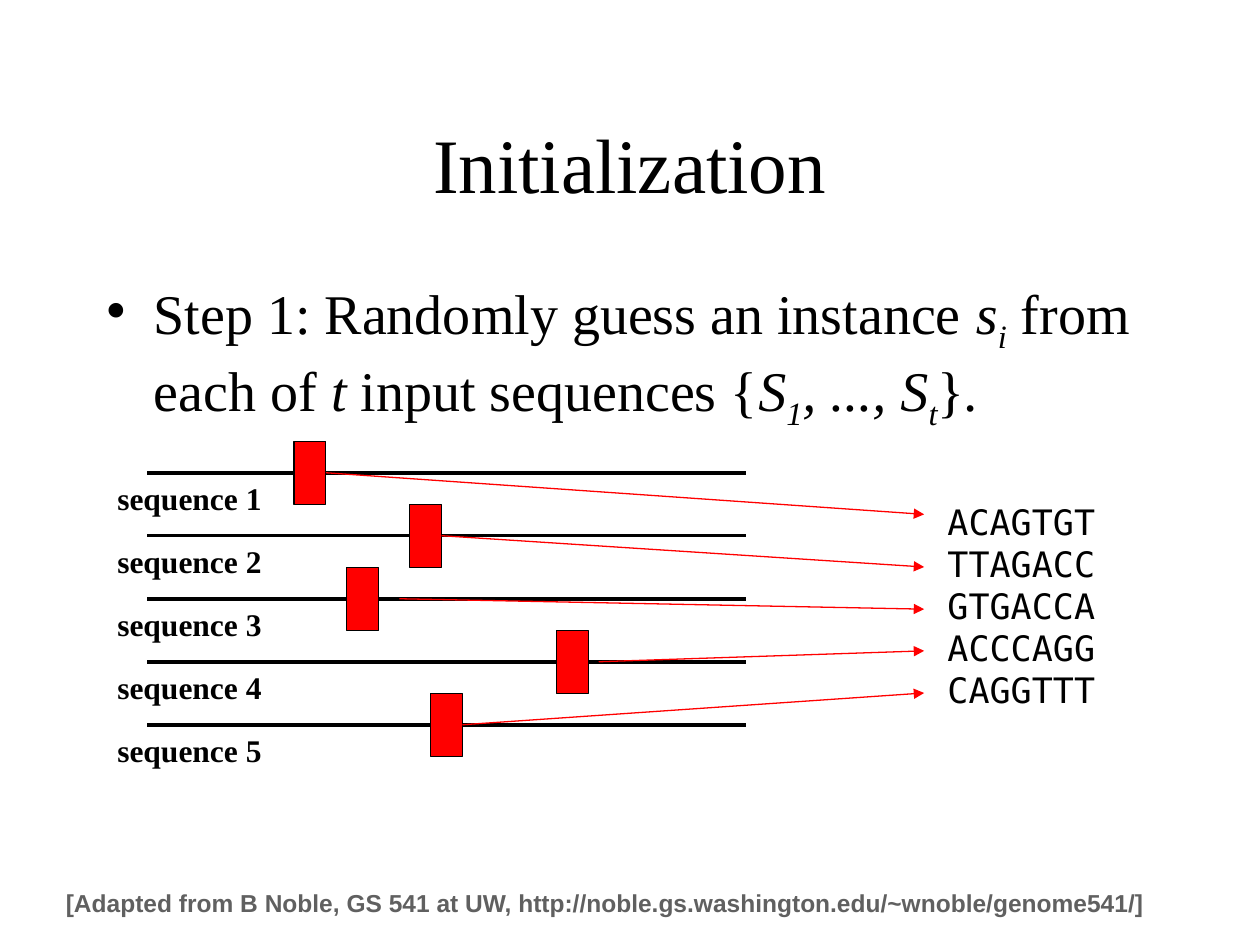
from dataclasses import dataclass

from lxml import etree
from pptx import Presentation
from pptx.dml.color import RGBColor
from pptx.enum.shapes import MSO_CONNECTOR, MSO_SHAPE
from pptx.enum.text import MSO_ANCHOR, MSO_AUTO_SIZE, PP_ALIGN
from pptx.oxml.ns import qn
from pptx.util import Cm, Pt

STRAIGHT = MSO_CONNECTOR.STRAIGHT
RECTANGLE = MSO_SHAPE.RECTANGLE
TOP, MIDDLE = MSO_ANCHOR.TOP, MSO_ANCHOR.MIDDLE
LEFT, CENTER = PP_ALIGN.LEFT, PP_ALIGN.CENTER
FIT_SHAPE = MSO_AUTO_SIZE.SHAPE_TO_FIT_TEXT
RIGHT_SIDE = 3


@dataclass(frozen=True)
class Theme:
    black: RGBColor = RGBColor(0x00, 0x00, 0x00)
    red: RGBColor = RGBColor(0xFF, 0x00, 0x00)
    gray: RGBColor = RGBColor(0x60, 0x60, 0x60)
    serif: str = "Times New Roman"
    sans: str = "Arial"
    mono: str = "DejaVu Sans Mono"
    title_size: int = 44
    body_size: int = 32
    label_size: int = 18
    motif_size: int = 20
    source_size: int = 14
    sequence_width: float = 2
    thin_width: float = 0.75


class SlideBuilder:
    """Draws elements on one slide in one theme; lengths are centimetres."""

    def __init__(self, slide, theme):
        self.shapes = slide.shapes
        self.theme = theme

    def format_run(self, span, size, font, color, bold=False):
        span.font.size = Pt(size)
        span.font.name = font
        span.font.color.rgb = color
        span.font.bold = bold

    def text(self, content, left, top, width, height, size, font=None, color=None,
             bold=False, align=CENTER, anchor=TOP, wrap=False):
        box = self.shapes.add_textbox(Cm(left), Cm(top), Cm(width), Cm(height))
        frame = box.text_frame
        frame.text = content
        frame.word_wrap = wrap
        frame.vertical_anchor = anchor
        if not wrap:
            frame.auto_size = FIT_SHAPE
        for para in frame.paragraphs:
            para.alignment = align
            for span in para.runs:
                self.format_run(span, size, font or self.theme.serif,
                                color or self.theme.black, bold)
        return box

    def bullet(self, spans, left, top, width, height, size):
        """Each span is (text, italic, subscript)."""
        box = self.shapes.add_textbox(Cm(left), Cm(top), Cm(width), Cm(height))
        box.text_frame.word_wrap = True
        para = box.text_frame.paragraphs[0]
        para.space_before = Pt(0.2 * size)
        for content, italic, subscript in spans:
            span = para.add_run()
            span.text = content
            self.format_run(span, size, self.theme.serif, self.theme.black)
            span.font.italic = italic
            if subscript:
                span.font._element.set("baseline", "-25000")
        properties = para._p.get_or_add_pPr()
        properties.set("marL", str(Cm(0.95)))
        properties.set("indent", str(-Cm(0.95)))
        etree.SubElement(properties, qn("a:buChar"), char="•")

    def line(self, start, end, color, width, arrow=False):
        connector = self.shapes.add_connector(
            STRAIGHT, *(Cm(value) for value in (*start, *end)))
        connector.line.color.rgb = color
        connector.line.width = Pt(width)
        if arrow:
            etree.SubElement(connector.line._get_or_add_ln(), qn("a:tailEnd"),
                             type="triangle")
        etree.SubElement(connector._element.spPr, qn("a:effectLst"))
        return connector

    def rectangle(self, left, top, width, height):
        box = self.shapes.add_shape(RECTANGLE, Cm(left), Cm(top), Cm(width), Cm(height))
        box.shadow.inherit = False
        box.fill.solid()
        box.fill.fore_color.rgb = self.theme.red
        box.line.color.rgb = self.theme.black
        box.line.width = Pt(self.theme.thin_width)
        return box


STEP = [
    ("Step 1: Randomly guess an instance ", False, False),
    ("s", True, False),
    ("i", True, True),
    (" from each of ", False, False),
    ("t", True, False),
    (" input sequences {", False, False),
    ("S", True, False),
    ("1", True, True),
    (", ..., S", True, False),
    ("t", True, True),
    ("}", False, False),
    (".", True, False),
]

# Instance text, left edge of its box, gap before its arrow, height of the arrow tip
INSTANCES = [
    ("ACAGTGT", 5.93, 0, 10.37),
    ("TTAGACC", 8.26, 0, 11.43),
    ("GTGACCA", 6.99, 0.42, 12.28),
    ("ACCCAGG", 11.22, 0.21, 13.12),
    ("CAGGTTT", 8.68, 0, 13.97),
]
FIRST_ROW, ROW_PITCH = 9.53, 1.27
SEQUENCE_LEFT, SEQUENCE_RIGHT = 2.97, 15.04
BOX_WIDTH, BOX_HEIGHT = 0.64, 1.27
ARROW_TIP = 18.63


def main():
    theme = Theme()
    deck = Presentation()
    deck.slide_width, deck.slide_height = Cm(25.4), Cm(19.05)
    page = SlideBuilder(deck.slides.add_slide(deck.slide_layouts[6]), theme)

    # Title and step
    page.text("Initialization", 1.9, 1.7, 21.6, 3.18, theme.title_size,
              anchor=MIDDLE, wrap=True)
    page.bullet(STEP, 1.9, 5.5, 21.6, 11.43, theme.body_size)

    # Sequences with their labels
    rows = [FIRST_ROW + index * ROW_PITCH for index in range(len(INSTANCES))]
    for number, y in enumerate(rows, start=1):
        page.line((SEQUENCE_LEFT, y), (SEQUENCE_RIGHT, y), theme.black,
                  theme.sequence_width)
        page.text(f"sequence {number}", 2.08, y, 3.48, 1.04, theme.label_size, bold=True)

    # Guessed instances
    boxes = [page.rectangle(left, y - BOX_HEIGHT / 2, BOX_WIDTH, BOX_HEIGHT)
             for y, (_, left, _, _) in zip(rows, INSTANCES)]
    motifs = "\n".join(motif for motif, *_ in INSTANCES)
    page.text(motifs, 18.85, 9.96, 4.14, 4.52, theme.motif_size, theme.mono, align=LEFT)

    # Arrows from each box to its instance
    for box, y, (_, left, gap, tip) in zip(boxes, rows, INSTANCES):
        arrow = page.line((left + BOX_WIDTH + gap, y), (ARROW_TIP, tip), theme.red,
                          theme.thin_width, arrow=True)
        if not gap:
            arrow.begin_connect(box, RIGHT_SIDE)

    # Source
    source = page.text(
        "[Adapted from B Noble, GS 541 at UW, http://noble.gs.washington.edu/~wnoble/genome541/]",
        0.99, 17.78, 22.43, 0.86, theme.source_size, theme.sans, theme.gray, bold=True)
    source.text_frame.paragraphs[0].space_before = Pt(0.5 * theme.source_size)

    deck.save("out.pptx")


if __name__ == "__main__":
    main()
